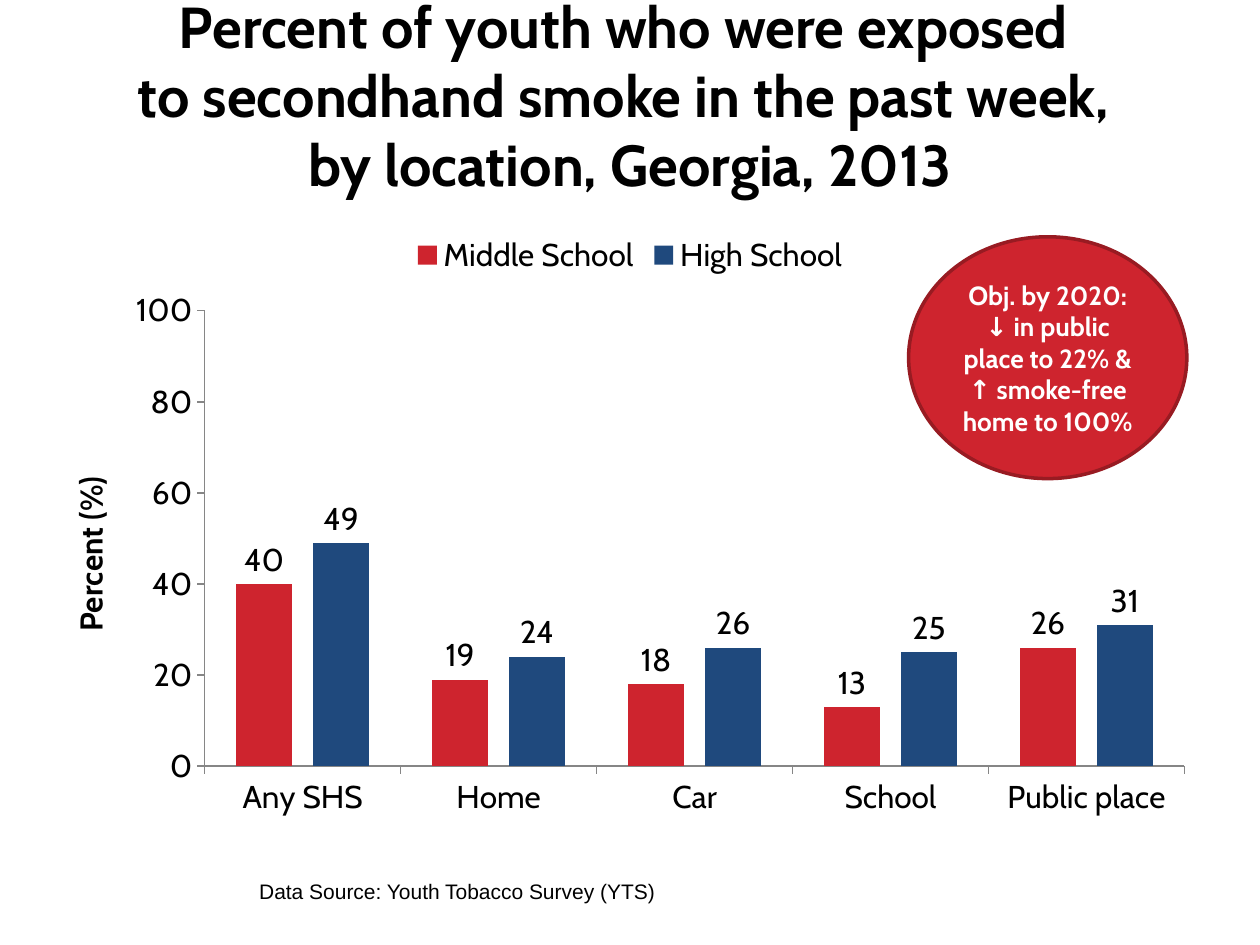
"""Build a slide charting youth exposure to secondhand smoke by location."""
from dataclasses import dataclass

from lxml.etree import SubElement
from pptx import Presentation
from pptx.chart.chart import Chart
from pptx.chart.data import CategoryChartData
from pptx.dml.color import RGBColor
from pptx.enum.chart import XL_CHART_TYPE as ChartType
from pptx.enum.chart import XL_LABEL_POSITION as LabelPos
from pptx.enum.chart import XL_LEGEND_POSITION as LegendPos
from pptx.enum.chart import XL_TICK_MARK as Tick
from pptx.enum.shapes import MSO_SHAPE as Shape
from pptx.enum.text import MSO_ANCHOR as Anchor
from pptx.enum.text import PP_ALIGN as Align
from pptx.oxml.ns import qn
from pptx.slide import Slide
from pptx.text.text import Font
from pptx.util import Pt

COLORS = {
    "black": "000000",
    "white": "FFFFFF",
    "red": "CE242E",
    "dark red": "981B22",
    "blue": "1F497D",
    "gray": "868686",
}


@dataclass
class Label:
    text: str
    box: tuple[float, float, float, float]
    size: float
    font: str = "Cabin"
    color: str = "black"
    bold: bool = True
    align: Align = Align.CENTER
    anchor: Anchor = Anchor.MIDDLE
    inset: float = 7.2
    ellipse: bool = False


@dataclass
class Group:
    name: str
    values: tuple[int, ...]
    color: str


LOCATIONS = ("Any SHS", "Home", "Car", "School", "Public place")
GROUPS = (
    Group("Middle School", (40, 19, 18, 13, 26), "red"),
    Group("High School", (49, 24, 26, 25, 31), "blue"),
)
CHART_BOX = (36, 126, 648, 356.4)
PLOT_LAYOUT = {"x": 0.125, "y": 0.145, "w": 0.864, "h": 0.73}
LABELS = (
    Label(
        "Percent of youth who were exposed \vto secondhand smoke in the past week, "
        "\vby location, Georgia, 2013",
        (12, 0, 696, 108), 33,
    ),
    Label(
        "Data Source: Youth Tobacco Survey (YTS)", (141, 498.2, 378, 21.8), 12,
        font="Arial", bold=False, align=Align.LEFT, anchor=Anchor.TOP,
    ),
    Label(
        "Obj. by 2020: ↓ in public place to 22% & ↑ smoke-free home to 100%",
        (519.2, 135.3, 159, 138.2), 15, color="white", inset=7, ellipse=True,
    ),
)


def rgb(name: str) -> RGBColor:
    """Look up a named colour."""
    return RGBColor.from_string(COLORS[name])


def set_font(font: Font, name: str, size: float, color: str, bold: bool) -> None:
    """Apply typeface, size, colour and weight."""
    font.name, font.size, font.bold = name, Pt(size), bold
    font.color.rgb = rgb(color)


def add_label(s: Slide, label: Label) -> None:
    """Add a text box or a filled ellipse with text."""
    box = [Pt(v) for v in label.box]
    if label.ellipse:
        sp = s.shapes.add_shape(Shape.OVAL, *box)
        sp.shadow.inherit = False
        sp.fill.solid()
        sp.fill.fore_color.rgb = rgb("red")
        sp.line.color.rgb = rgb("dark red")
        sp.line.width = Pt(2)
    else:
        sp = s.shapes.add_textbox(*box)
    tf = sp.text_frame
    tf.word_wrap = True
    tf.vertical_anchor = label.anchor
    tf.margin_left = tf.margin_right = Pt(label.inset)
    p = tf.paragraphs[0]
    p.text = label.text
    p.alignment = label.align
    set_font(p.font, label.font, label.size, label.color, label.bold)


def set_plot_layout(chart: Chart) -> None:
    """Fix the inner plot area as fractions of the chart."""
    area = chart._chartSpace.chart.plotArea
    for old in area.findall(qn("c:layout")):
        area.remove(old)
    layout = SubElement(area, qn("c:layout"))
    area.insert(0, layout)
    manual = SubElement(layout, qn("c:manualLayout"))
    settings = {"layoutTarget": "inner", "xMode": "edge", "yMode": "edge", **PLOT_LAYOUT}
    for tag, value in settings.items():
        SubElement(manual, qn(f"c:{tag}")).set("val", str(value))


def add_exposure_chart(s: Slide) -> None:
    """Add the clustered columns by location."""
    data = CategoryChartData()
    data.categories = LOCATIONS
    for group in GROUPS:
        data.add_series(group.name, group.values)
    box = [Pt(v) for v in CHART_BOX]
    chart = s.shapes.add_chart(ChartType.COLUMN_CLUSTERED, *box, data).chart
    set_font(chart.font, "Cabin", 18, "black", False)
    chart.has_title = False
    chart.has_legend = True
    chart.legend.position = LegendPos.TOP
    chart.legend.include_in_layout = False
    set_plot_layout(chart)

    plot = chart.plots[0]
    plot.gap_width, plot.overlap = 112, -37
    plot.vary_by_categories = False
    for series, group in zip(plot.series, GROUPS):
        series.format.fill.solid()
        series.format.fill.fore_color.rgb = rgb(group.color)
        series.data_labels.show_value = True
        series.data_labels.position = LabelPos.OUTSIDE_END

    for axis in (chart.category_axis, chart.value_axis):
        axis.has_major_gridlines = False
        axis.major_tick_mark = Tick.OUTSIDE
        axis.minor_tick_mark = Tick.NONE
        axis.format.line.color.rgb = rgb("gray")
    axis = chart.value_axis
    axis.minimum_scale, axis.maximum_scale, axis.major_unit = 0, 100, 20
    tf = axis.axis_title.text_frame
    tf.text = "Percent (%)"
    set_font(tf.paragraphs[0].font, "Cabin", 18, "black", True)


def main() -> None:
    """Assemble and save the slide."""
    prs = Presentation()
    prs.slide_width, prs.slide_height = Pt(720), Pt(540)
    s = prs.slides.add_slide(prs.slide_layouts[6])
    add_exposure_chart(s)
    for label in LABELS:
        add_label(s, label)
    prs.save("out.pptx")


if __name__ == "__main__":
    main()
